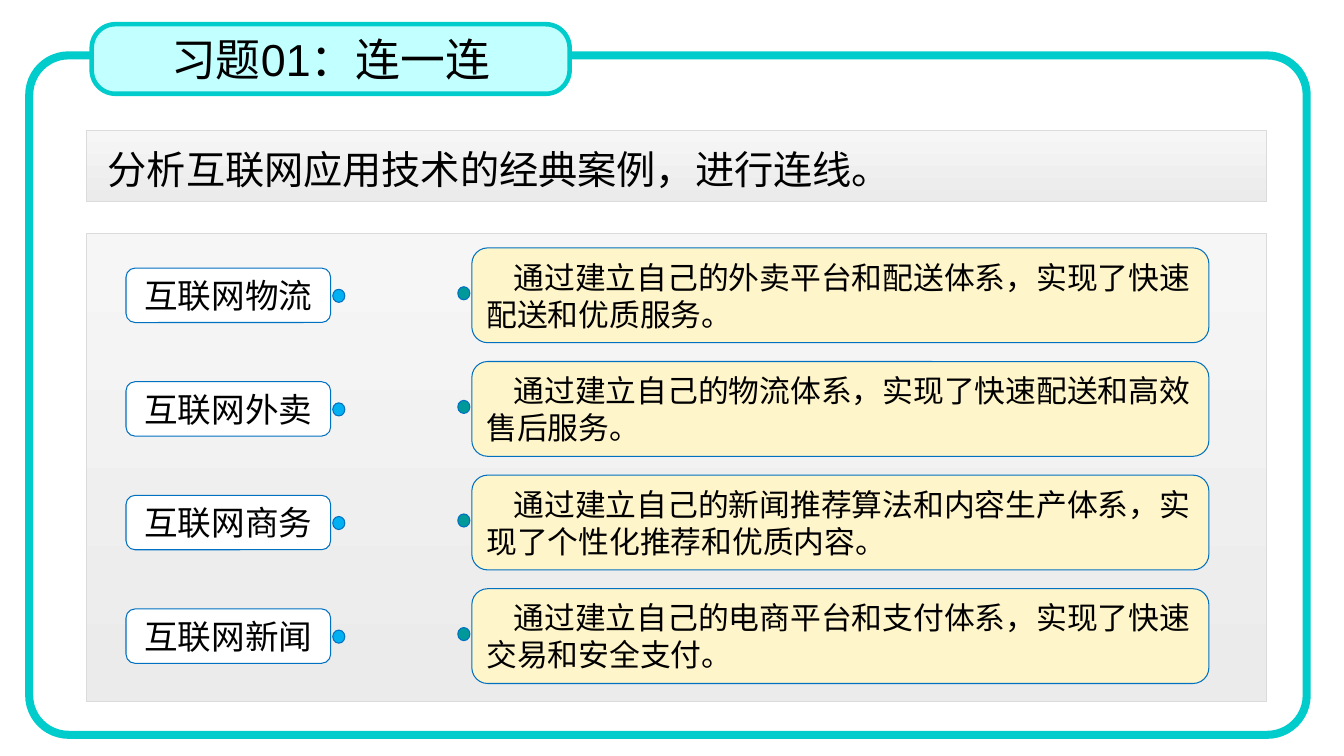
from lxml import etree
from pptx import Presentation
from pptx.dml.color import RGBColor
from pptx.enum.shapes import MSO_SHAPE
from pptx.enum.text import MSO_ANCHOR, PP_ALIGN
from pptx.oxml.ns import qn
from pptx.util import Inches, Pt

# Content
HEADING = "习题01：连一连"
TASK = "分析互联网应用技术的经典案例，进行连线。"
PAIRS = [
    ("互联网物流", "通过建立自己的外卖平台和配送体系，实现了快速配送和优质服务。"),
    ("互联网外卖", "通过建立自己的物流体系，实现了快速配送和高效售后服务。"),
    ("互联网商务", "通过建立自己的新闻推荐算法和内容生产体系，实现了个性化推荐和优质内容。"),
    ("互联网新闻", "通过建立自己的电商平台和支付体系，实现了快速交易和安全支付。"),
]

# Layout and style
CJK = "Noto Sans CJK SC"
ROW_TOP, ROW_PITCH, CASE_HEIGHT = 2.46, 1.127, 0.94
TERM_OFFSET, TERM_HEIGHT = 0.2, 0.54
DOT = (0.12, 0.13)
TEAL, BLUE = "00CCCC", "0070C0"
PANEL_STOPS = ("F6F6F6", "EBEBEB")

prs = Presentation()
prs.slide_width, prs.slide_height = Inches(13.33), Inches(7.5)
slide = prs.slides.add_slide(prs.slide_layouts[5])


def color(value):
    return RGBColor.from_string(value)


def add_box(kind, left, top, width, height, fill=None, line=BLUE, weight=0.75, radius=None):
    box = slide.shapes.add_shape(kind, *map(Inches, (left, top, width, height)))
    box.shadow.inherit = False
    if radius is not None:
        box.adjustments[0] = radius
    if fill is None:
        box.fill.background()
    elif isinstance(fill, tuple):
        box.fill.gradient()
        box.fill.gradient_angle = 270
        for stop, value in zip(box.fill.gradient_stops, fill):
            stop.color.rgb = color(value)
    else:
        box.fill.solid()
        box.fill.fore_color.rgb = color(fill)
    box.line.color.rgb = color(line)
    box.line.width = Pt(weight)
    return box


def write(target, text, size, latin=CJK, align=PP_ALIGN.LEFT, anchor=MSO_ANCHOR.MIDDLE,
          spacing=None, indent=0):
    frame = target.text_frame
    frame.word_wrap = True
    frame.vertical_anchor = anchor
    paragraph = frame.paragraphs[0]
    paragraph.alignment = align
    paragraph.line_spacing = spacing
    if indent:
        paragraph._p.get_or_add_pPr().set("indent", str(Inches(indent)))
    run = paragraph.add_run()
    run.text = text
    run.font.size = Pt(size)
    run.font.name = latin
    run.font.color.rgb = color("000000")
    etree.SubElement(run._r.get_or_add_rPr(), qn("a:ea")).set("typeface", CJK)


# Panels and frame
for top, height in ((2.32, 4.64), (1.29, 0.71)):
    add_box(MSO_SHAPE.RECTANGLE, 0.86, top, 11.7, height, PANEL_STOPS, "DBDBDB", 0.5)
add_box(MSO_SHAPE.ROUNDED_RECTANGLE, 0.29, 0.55, 12.67, 6.74, None, TEAL, 5.75, 0.058)

# Heading tab, with the title in front of it
tab = (0.91, 0.24, 4.74, 0.69)
add_box(MSO_SHAPE.ROUNDED_RECTANGLE, *tab, "C2FFFF", TEAL, 3.25, 0.341)
title = slide.shapes.title
title.left, title.top, title.width, title.height = map(Inches, tab)
write(title, HEADING, 32, latin="Arial", align=PP_ALIGN.CENTER)
slide.shapes._spTree.append(title._element)

# Task
task = slide.shapes.add_textbox(*map(Inches, (0.97, 1.16, 11.59, 0.81)))
write(task, TASK, 28, anchor=MSO_ANCHOR.TOP, spacing=1.5)

# Terms and cases to be matched
for row, (term, case) in enumerate(PAIRS):
    top = ROW_TOP + row * ROW_PITCH
    term_box = add_box(MSO_SHAPE.ROUNDED_RECTANGLE, 1.25, top + TERM_OFFSET, 2.03, TERM_HEIGHT,
                       "FFFFFF", radius=0.167)
    write(term_box, term, 24, align=PP_ALIGN.CENTER)
    add_box(MSO_SHAPE.OVAL, 3.3, top + 0.41, *DOT, "00B0F0")

    case_box = add_box(MSO_SHAPE.ROUNDED_RECTANGLE, 4.68, top, 7.31, CASE_HEIGHT,
                       "FFF5CA", radius=0.167)
    write(case_box, case, 22, indent=0.27)
    add_box(MSO_SHAPE.OVAL, 4.54, top + 0.385, *DOT, "009999")

prs.save("out.pptx")
